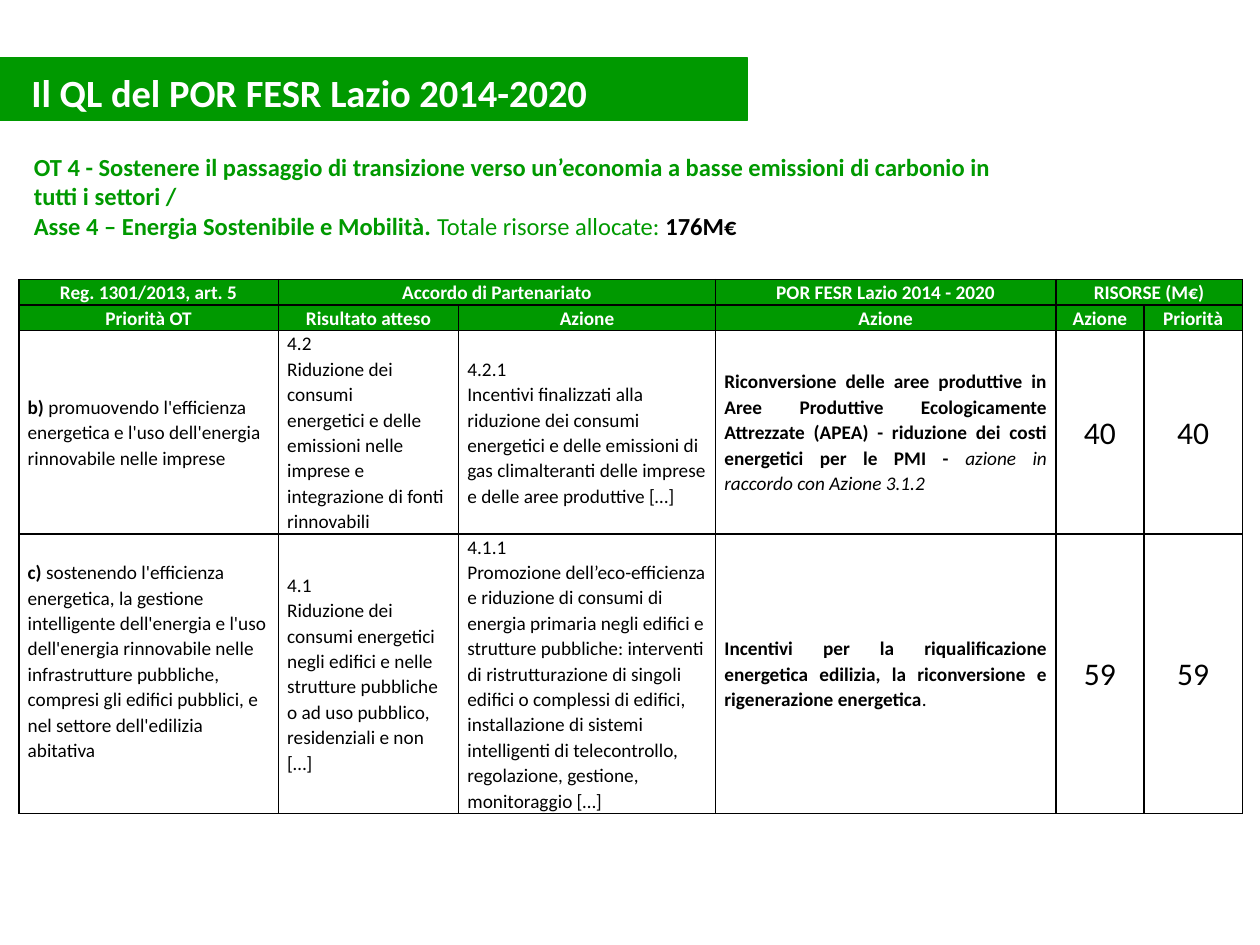
import lxml.etree
import pptx
import pptx.dml.color
import pptx.enum.shapes
import pptx.enum.text
import pptx.oxml.ns
import pptx.util

GREEN = pptx.dml.color.RGBColor(0x00, 0x99, 0x00)
WHITE = pptx.dml.color.RGBColor(0xFF, 0xFF, 0xFF)
BLACK = pptx.dml.color.RGBColor(0x00, 0x00, 0x00)
LEFT = pptx.enum.text.PP_ALIGN.LEFT
CENTER = pptx.enum.text.PP_ALIGN.CENTER
JUSTIFY = pptx.enum.text.PP_ALIGN.JUSTIFY
MIDDLE = pptx.enum.text.MSO_ANCHOR.MIDDLE

deck = pptx.Presentation()
deck.slide_width = pptx.util.Inches(10)
deck.slide_height = pptx.util.Inches(7.5)
page = deck.slides.add_slide(deck.slide_layouts[6])


def area(left, top, width, height):
    return (int(deck.slide_width * left), int(deck.slide_height * top),
            int(deck.slide_width * width), int(deck.slide_height * height))


def add_span(para, text, size, color, bold=False, italic=False):
    span = para.add_run()
    span.text = text
    span.font.name = "Calibri"
    span.font.size = pptx.util.Pt(size)
    span.font.color.rgb = color
    span.font.bold = bold
    span.font.italic = italic


heading = page.shapes.add_textbox(*area(0.017, 0.124, 0.811, 0.167)).text_frame
heading.word_wrap = True
heading.vertical_anchor = MIDDLE
para = heading.paragraphs[0]
add_span(para, "OT 4 - Sostenere il passaggio di transizione verso un’economia a basse "
         "emissioni di carbonio in tutti i settori /", 14, GREEN, True)
para = heading.add_paragraph()
add_span(para, "Asse 4 – Energia Sostenibile e Mobilità. ", 14, GREEN, True)
add_span(para, "Totale risorse allocate: ", 14, GREEN)
add_span(para, "176M€", 14, BLACK, True)

column_shares = [0.206, 0.143, 0.204, 0.27, 0.07, 0.078]
row_shares = [0.027, 0.027, 0.215, 0.296]
header_rows = [
    ["Reg. 1301/2013, art. 5", "Accordo di Partenariato", "",
     "POR FESR Lazio 2014 - 2020", "RISORSE (M€)", ""],
    ["Priorità OT", "Risultato atteso", "Azione", "Azione", "Azione", "Priorità"],
]
body_rows = [
    [
        [[("b) ", True), ("promuovendo l'efficienza energetica e l'uso dell'energia "
                          "rinnovabile nelle imprese",)]],
        [[("4.2",)], [("Riduzione dei consumi",)], [("energetici e delle",)],
         [("emissioni nelle imprese e",)], [("integrazione di fonti",)],
         [("rinnovabili",)]],
        [[("4.2.1",)],
         [("Incentivi finalizzati alla riduzione dei consumi energetici e delle "
           "emissioni di gas climalteranti delle imprese e delle aree produttive […]",)]],
        [[("Riconversione delle aree produttive in Aree Produttive Ecologicamente "
           "Attrezzate (APEA) - riduzione dei costi energetici per le PMI - ", True),
          ("azione in raccordo con Azione 3.1.2", False, True)]],
        [[("40",)]],
        [[("40",)]],
    ],
    [
        [[("c) ", True),
          ("sostenendo l'efficienza energetica, la gestione intelligente dell'energia "
           "e l'uso dell'energia rinnovabile nelle infrastrutture pubbliche, compresi "
           "gli edifici pubblici, e nel settore dell'edilizia abitativa",)]],
        [[("4.1",)],
         [("Riduzione dei consumi energetici negli edifici e nelle strutture pubbliche "
           "o ad uso pubblico, residenziali e non […]",)]],
        [[("4.1.1",)],
         [("Promozione dell’eco-efficienza e riduzione di consumi di energia primaria "
           "negli edifici e strutture pubbliche: interventi di ristrutturazione di "
           "singoli edifici o complessi di edifici, installazione di sistemi "
           "intelligenti di telecontrollo, regolazione, gestione, monitoraggio […]",)]],
        [[("Incentivi per la riqualificazione energetica edilizia, la riconversione e "
           "rigenerazione energetica", True), (".",)]],
        [[("59",)]],
        [[("59",)]],
    ],
]
header_cells = [[[[(text, True)]] if text else [] for text in row] for row in header_rows]
body_alignments = [LEFT, LEFT, LEFT, JUSTIFY, CENTER, CENTER]
body_sizes = [11, 11, 11, 11, 18, 18]

table = page.shapes.add_table(
    len(row_shares), len(column_shares),
    *area(0.015, 0.296, sum(column_shares), sum(row_shares))).table
table.first_row = False
table.horz_banding = False
for column, share in zip(table.columns, column_shares):
    column.width = int(deck.slide_width * share)
for row, share in zip(table.rows, row_shares):
    row.height = int(deck.slide_height * share)
for start in (1, 4):
    table.cell(0, start).merge(table.cell(0, start + 1))

for row_index, row in enumerate(header_cells + body_rows):
    is_header = row_index < len(header_cells)
    for column_index, paragraphs in enumerate(row):
        cell = table.cell(row_index, column_index)
        cell.margin_left = cell.margin_right = pptx.util.Inches(0.07)
        cell.margin_top = cell.margin_bottom = 0
        cell.vertical_anchor = MIDDLE
        properties = cell._tc.get_or_add_tcPr()
        for side in ("a:lnL", "a:lnR", "a:lnT", "a:lnB"):
            border = lxml.etree.SubElement(
                properties, pptx.oxml.ns.qn(side), w=str(pptx.util.Pt(1)))
            paint = lxml.etree.SubElement(border, pptx.oxml.ns.qn("a:solidFill"))
            lxml.etree.SubElement(paint, pptx.oxml.ns.qn("a:srgbClr"), val=str(BLACK))
        cell.fill.solid()
        cell.fill.fore_color.rgb = GREEN if is_header else WHITE
        for index, spans in enumerate(paragraphs):
            frame = cell.text_frame
            para = frame.add_paragraph() if index else frame.paragraphs[0]
            para.alignment = CENTER if is_header else body_alignments[column_index]
            para.line_spacing = 1.07
            for text, *style in spans:
                add_span(para, text, 11 if is_header else body_sizes[column_index],
                         WHITE if is_header else BLACK, *style)
table.cell(3, 0).margin_bottom = pptx.util.Inches(0.2)

banner = page.shapes.add_shape(
    pptx.enum.shapes.MSO_SHAPE.RECTANGLE, *area(0, 0.061, 0.593, 0.067))
banner.shadow.inherit = False
banner.fill.solid()
banner.fill.fore_color.rgb = GREEN
banner.line.color.rgb = GREEN
banner.line.width = pptx.util.Pt(0.75)
title = banner.text_frame
title.word_wrap = True
title.vertical_anchor = MIDDLE
title.margin_left = pptx.util.Inches(0.25)
title.margin_top = pptx.util.Inches(0.1)
title.margin_bottom = pptx.util.Inches(0.05)
para = title.paragraphs[0]
para.alignment = LEFT
add_span(para, "Il QL del POR FESR Lazio 2014-2020", 22, WHITE, True)

deck.save("out.pptx")
